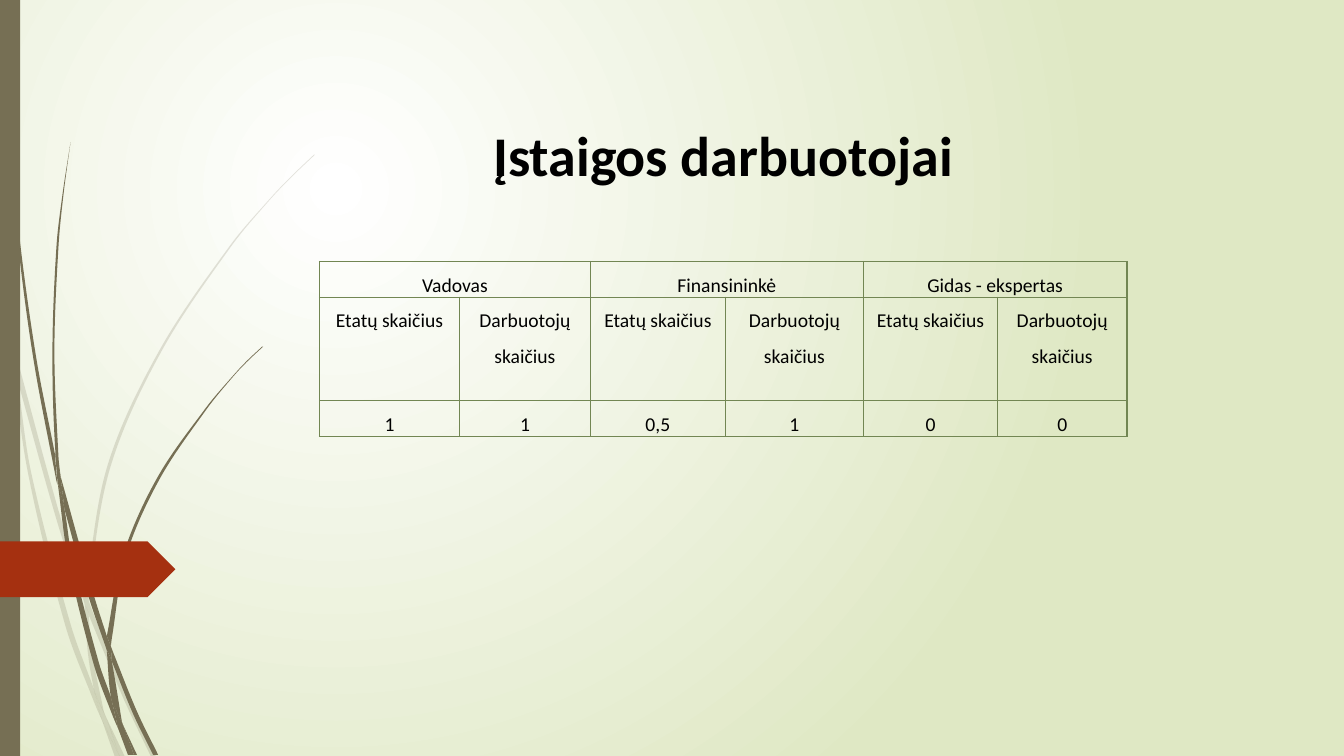
from dataclasses import dataclass
from math import dist

from pptx import Presentation
from pptx.dml.color import RGBColor
from pptx.enum.shapes import MSO_SHAPE
from pptx.enum.text import MSO_ANCHOR, PP_ALIGN
from pptx.oxml import parse_xml
from pptx.oxml.ns import nsdecls, qn
from pptx.util import Cm, Pt

RECT, ARROW = MSO_SHAPE.RECTANGLE, MSO_SHAPE.PENTAGON
TOP, MIDDLE = MSO_ANCHOR.TOP, MSO_ANCHOR.MIDDLE
CENTER = PP_ALIGN.CENTER
FONT = "Calibri"
BLACK, WHITE, LIME = "000000", "FFFFFF", "DFE8C4"
BROWN, RED, GREEN = "766F54", "A53010", "728653"
UNIT = Cm(2.54) / 100

Point = tuple[float, float]


@dataclass
class Blade:
    """A piece of grass with two curved sides, in hundredths of an inch."""
    out: list[Point]
    back: list[Point]


@dataclass
class Bar:
    """A plain filled shape, in centimetres."""
    kind: int
    width: float
    top: float
    height: float
    color: str


PALE = [
    Blade([(11, 350), (9, 322), (0, 282)], [(0, 299), (10, 344), (11, 350)]),
    Blade([(14, 345), (62, 520), (85, 586)], [(84, 599), (58, 522), (17, 376)]),
    Blade([(88, 596), (92, 607), (127, 692), (155, 751)], [(150, 751), (123, 694), (88, 610)]),
    Blade([(105, 711), (124, 751)], [(119, 751), (105, 711)]),
    Blade([(11, 350), (17, 376), (31, 469), (70, 619), (93, 683)],
          [(99, 707), (101, 714), (92, 693), (65, 621), (28, 470), (11, 350)]),
    Blade([(84, 599), (87, 646), (93, 683), (96, 692), (105, 711)],
          [(103, 706), (91, 646), (88, 610), (88, 608), (84, 599)]),
    Blade([(88, 596), (88, 584), (110, 462), (160, 349), (229, 245), (268, 198), (290, 175), (312, 154)],
          [(312, 153), (289, 175), (268, 197), (228, 244), (158, 348), (107, 461), (85, 584), (85, 586)]),
    Blade([(101, 714), (114, 751)], [(119, 751), (101, 714)]),
    Blade([(88, 608), (88, 596)], [(85, 586), (84, 599)]),
    Blade([(93, 683), (96, 692), (105, 711), (119, 751)], [(101, 714), (99, 707), (93, 683)]),
]
DARK = [
    Blade([(3, 0), (4, 48), (7, 110), (17, 233), (33, 355), (56, 477), (57, 481)],
          [(55, 457), (55, 453), (36, 355), (19, 232), (8, 109), (5, 48), (4, 0)]),
    Blade([(60, 472), (93, 590), (106, 631)], [(106, 645), (88, 592), (64, 505)]),
    Blade([(110, 641), (113, 649), (136, 706), (157, 749)], [(152, 749), (132, 708), (111, 656)]),
    Blade([(57, 477), (64, 505), (72, 556), (98, 657), (110, 691)],
          [(116, 717), (117, 722), (111, 708), (93, 659), (68, 557), (57, 477)]),
    Blade([(60, 472), (58, 453), (54, 349), (58, 245), (63, 193), (70, 141)],
          [(70, 141), (62, 193), (56, 245), (52, 349), (55, 449), (60, 472)]),
    Blade([(122, 719), (136, 749)], [(133, 749), (122, 719)]),
    Blade([(57, 477), (64, 505)], [(60, 472), (55, 449), (55, 453)]),
    Blade([(110, 641), (111, 633), (125, 552), (158, 476), (205, 406), (231, 374), (245, 359), (261, 344)],
          [(260, 344), (245, 358), (231, 373), (204, 405), (156, 474), (122, 551), (106, 631)]),
    Blade([(117, 722), (127, 749)], [(131, 749), (117, 722)]),
    Blade([(106, 645), (110, 691), (116, 706), (122, 719)], [(121, 716), (111, 656), (109, 651), (106, 645)]),
    Blade([(106, 645), (109, 651), (111, 656)], [(110, 641), (106, 631)]),
    Blade([(110, 691), (116, 717), (117, 722), (130, 749)], [(133, 749), (122, 719), (116, 706), (110, 691)]),
]
BARS = [
    Bar(RECT, 0.51, 0, 19.05, BROWN),
    Bar(ARROW, 4.42, 13.64, 1.41, RED),
]
COLS = [3.53, 3.3, 3.4, 3.48, 3.38, 3.26]
ROWS = [0.86, 2.6, 0.86]
STAFF = ["Vadovas", "Finansininkė", "Gidas - ekspertas"]
HEADS = ["Etatų skaičius", "Darbuotojų skaičius"] * len(STAFF)
COUNTS = ["1", "1", "0,5", "1", "0", "0"]


def rgb(code: str) -> RGBColor:
    """Turn a hex string into a colour."""
    return RGBColor.from_string(code)


def handle(prior: Point, knot: Point, after: Point, goal: Point) -> Point:
    """Find the curve handle at a knot, a third of the way to the goal."""
    span = dist(prior, knot) + dist(knot, after)
    reach = dist(knot, goal) / span / 3 if span else 0
    return tuple(k + (n - p) * reach for p, k, n in zip(prior, knot, after))


def bend(lines: list, side: list[Point]) -> None:
    """Turn the straight lines along a side into one smooth curve."""
    ends = [side[0], *side, side[-1]]
    for line, a, b, c, d in zip(lines, ends, ends[1:], ends[2:], ends[3:]):
        dots = (handle(a, b, c, c), handle(d, c, b, b), c)
        marks = "".join(f'<a:pt x="{round(x)}" y="{round(y)}"/>' for x, y in dots)
        curve = parse_xml(f'<a:cubicBezTo {nsdecls("a")}>{marks}</a:cubicBezTo>')
        line.getparent().replace(line, curve)


def paint(shape, color: str, alpha: int = 100) -> None:
    """Fill a shape without line or shadow."""
    shape.shadow.inherit = False
    shape.line.fill.background()
    shape.fill.solid()
    shape.fill.fore_color.rgb = rgb(color)
    if alpha < 100:
        tint = shape.element.spPr.find(qn("a:solidFill"))[0]
        tint.append(parse_xml(f'<a:alpha {nsdecls("a")} val="{alpha * 1000}"/>'))


def draw_blade(slide, blade: Blade, alpha: int) -> None:
    """Draw one piece of grass."""
    dots = [(x * UNIT, y * UNIT) for x, y in blade.out + blade.back]
    form = slide.shapes.build_freeform(*dots[0])
    form.add_line_segments(dots[1:], close=True)
    shape = form.convert_to_shape()
    local = [(x - shape.left, y - shape.top) for x, y in dots]
    lines = list(shape.element.iter(qn("a:lnTo")))
    turn = len(blade.out)
    bend(lines[:turn - 1], local[:turn])
    bend(lines[turn:], local[turn:])
    paint(shape, BROWN, alpha)


def draw_bar(slide, bar: Bar) -> None:
    """Draw a bar at the left edge."""
    shape = slide.shapes.add_shape(bar.kind, 0, Cm(bar.top), Cm(bar.width), Cm(bar.height))
    paint(shape, bar.color)


def style(par, size: int, bold: bool) -> None:
    """Centre a paragraph and set its font."""
    par.alignment = CENTER
    for run in par.runs:
        run.font.name, run.font.size, run.font.bold = FONT, Pt(size), bold
        run.font.color.rgb = rgb(BLACK)


def fill_cell(cell, text: str, anchor: int) -> None:
    """Write a table cell and frame it."""
    cell.text_frame.text = text
    par = cell.text_frame.paragraphs[0]
    style(par, 14, False)
    par.line_spacing = 1.5
    cell.vertical_anchor = anchor
    cell.margin_left = cell.margin_right = Cm(0.18)
    cell.margin_top = cell.margin_bottom = 0
    frame_cell(cell)


def frame_cell(cell) -> None:
    """Clear the fill of a cell and give it thin borders."""
    cell.fill.background()
    for place, edge in enumerate("LRTB"):
        cell._tc.tcPr.insert(place, parse_xml(
            f'<a:ln{edge} {nsdecls("a")} w="{Pt(1)}"><a:solidFill>'
            f'<a:srgbClr val="{GREEN}"/></a:solidFill></a:ln{edge}>'))


def draw_table(slide) -> None:
    """Draw the staff table."""
    frame = slide.shapes.add_table(
        len(ROWS), len(COLS), Cm(8.05), Cm(6.59), Cm(sum(COLS)), Cm(sum(ROWS)))
    table = frame.table
    table.first_row = table.horz_banding = False
    for col, width in zip(table.columns, COLS):
        col.width = Cm(width)
    for row, height in zip(table.rows, ROWS):
        row.height = Cm(height)
    for i, name in enumerate(STAFF):
        left, right = table.cell(0, 2 * i), table.cell(0, 2 * i + 1)
        left.merge(right)
        fill_cell(left, name, TOP)
        frame_cell(right)
    for i, (head, count) in enumerate(zip(HEADS, COUNTS)):
        fill_cell(table.cell(1, i), head, TOP)
        fill_cell(table.cell(2, i), count, MIDDLE)


def draw_back(slide) -> None:
    """Give the slide a round gradient."""
    fill = slide.background.fill
    fill.gradient()
    for stop, color in zip(fill.gradient_stops, (WHITE, LIME)):
        stop.color.rgb = rgb(color)
    grad = next(slide.element.iter(qn("a:gradFill")))
    grad.replace(grad.find(qn("a:lin")), parse_xml(
        f'<a:path {nsdecls("a")} path="circle">'
        '<a:fillToRect l="50000" t="50000" r="100000" b="100000"/></a:path>'))


def draw_title(slide) -> None:
    """Place and format the title."""
    title = slide.shapes.title
    title.left, title.top, title.width, title.height = Cm(5.84), Cm(2.9), Cm(24.77), Cm(1.37)
    title.text_frame.text = "Įstaigos darbuotojai"
    title.text_frame.vertical_anchor = TOP
    par = title.text_frame.paragraphs[0]
    par.space_before = Pt(10)
    style(par, 40, True)


def main() -> None:
    """Build the slide and save it."""
    deck = Presentation()
    deck.slide_width, deck.slide_height = Cm(33.87), Cm(19.05)
    slide = deck.slides.add_slide(deck.slide_layouts[5])
    draw_back(slide)
    for blades, alpha in ((PALE, 20), (DARK, 100)):
        for blade in blades:
            draw_blade(slide, blade, alpha)
    for bar in BARS:
        draw_bar(slide, bar)
    draw_title(slide)
    draw_table(slide)
    deck.save("out.pptx")


if __name__ == "__main__":
    main()
